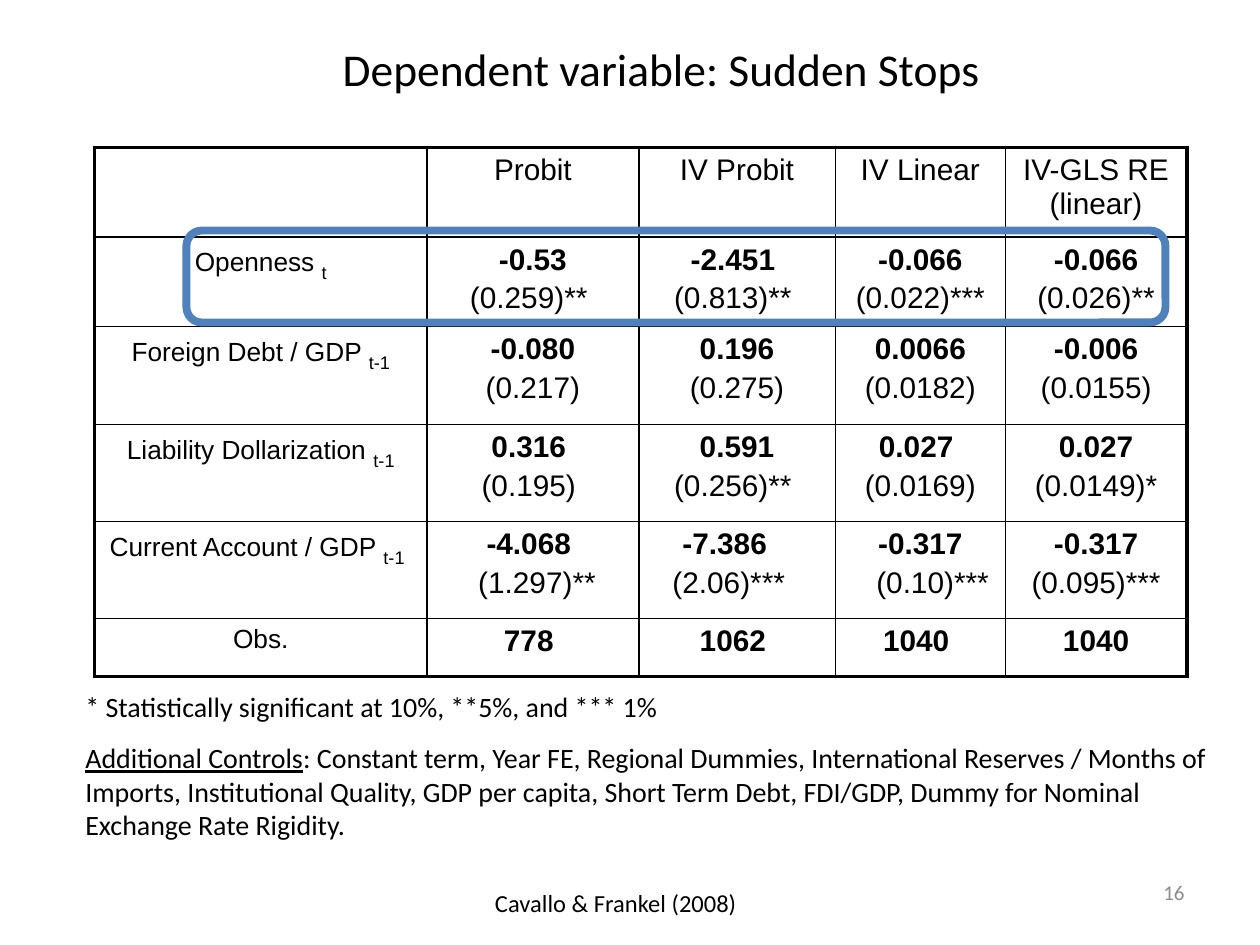
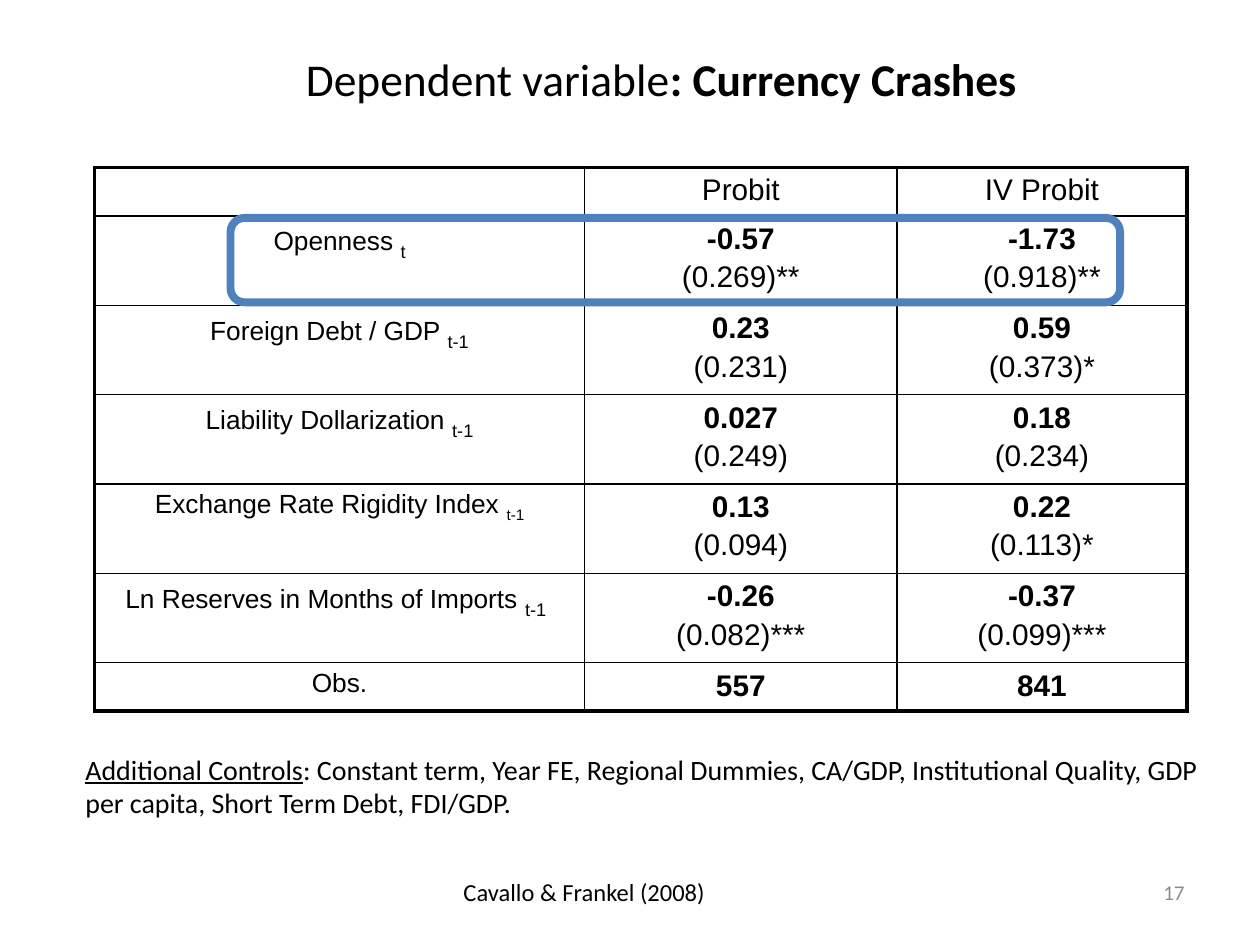
"""Build two slides of regression tables on sudden stops and currency crashes."""
from lxml.etree import SubElement
from pptx import Presentation
from pptx.dml.color import RGBColor
from pptx.enum.shapes import MSO_SHAPE
from pptx.enum.text import MSO_ANCHOR, PP_ALIGN
from pptx.oxml.ns import qn
from pptx.util import Inches, Pt

BLACK, GREY, BLUE = "000000", "8C8C8C", "4F81BD"
BODY_FONT, TABLE_FONT = "Calibri", "Arial"
VALUE_SIZE, LABEL_SIZE, SUBSCRIPT_SIZE = 17, 15, 18
OUTER_BORDER, INNER_BORDER = 2.25, 1
CITATION = "Cavallo & Frankel (2008)"
CONTROLS = "Additional Controls"
TABLE_LEFT = 0.75

INDENTS = {
    "(1.297)** ": ("marL", 9.4),
    "-7.386 ": ("marR", 9.4),
    "(0.10)*** ": ("marL", 14),
}

SLIDES = [
    {
        "title": [("Dependent variable: Sudden Stops", False)],
        "title_top": -0.08,
        "table_top": 1.17,
        "columns": [2.64, 1.68, 1.56, 1.35, 1.44],
        "heights": [0.71, 0.71, 0.78, 0.77, 0.77, 0.46],
        "header": ["Probit", "IV Probit", "IV Linear", "IV-GLS RE (linear)"],
        "rows": [
            (("Openness ", "t"),
             ["-0.53", "-2.451 ", "-0.066", "-0.066"],
             ["(0.259)** ", "(0.813)** ", "(0.022)***", "(0.026)**"]),
            (("Foreign Debt / GDP ", "t-1"),
             ["-0.080", "0.196", "0.0066", "-0.006"],
             [" (0.217) ", "(0.275)", "(0.0182)", "(0.0155)"]),
            (("Liability Dollarization ", "t-1"),
             ["0.316 ", "0.591", "0.027 ", "0.027"],
             ["(0.195) ", "(0.256)** ", " (0.0169) ", "(0.0149)*"]),
            (("Current Account / GDP ", "t-1", " "),
             ["-4.068 ", "-7.386 ", "-0.317", "-0.317"],
             ["(1.297)** ", "(2.06)***", "(0.10)*** ", "(0.095)***"]),
        ],
        "observations": ["778 ", "1062 ", "1040 ", "1040"],
        "significance": "* Statistically significant at 10%, **5%, and *** 1%",
        "controls": ": Constant term, Year FE, Regional Dummies, International "
                    "Reserves / Months of Imports, Institutional Quality, GDP per "
                    "capita, Short Term Debt, FDI/GDP, Dummy for Nominal Exchange "
                    "Rate Rigidity.",
        "controls_at": (0.58, 5.83, 9.33, 0.9),
        "citation_at": (3.83, 7, 2.58, 0.34),
        "number": "16",
        "highlight_at": (1.48, 1.83, 7.77, 0.73),
    },
    {
        "title": [("Dependent variable", False), (": Currency Crashes", True)],
        "title_top": 0,
        "table_top": 1.33,
        "columns": [3.89, 2.48, 2.3],
        "heights": [0.36] + [0.67] * 5 + [0.36],
        "header": ["Probit", "IV Probit"],
        "rows": [
            (("Openness ", "t"), ["-0.57", "-1.73"], ["(0.269)**", "(0.918)**"]),
            (("Foreign Debt / GDP ", "t-1"), ["0.23", "0.59"], ["(0.231)", "(0.373)*"]),
            (("Liability Dollarization ", "t-1"), ["0.027", "0.18"], ["(0.249)", "(0.234)"]),
            (("Exchange Rate Rigidity Index ", "t-1"),
             ["0.13", "0.22"], ["(0.094)", "(0.113)*"]),
            (("Ln Reserves in Months of Imports ", "t-1", " "),
             ["-0.26", "-0.37"], ["(0.082)***", "(0.099)***"]),
        ],
        "observations": ["557", "841"],
        "significance": None,
        "controls": ": Constant term, Year FE, Regional Dummies, CA/GDP, Institutional "
                    "Quality, GDP per capita, Short Term Debt, FDI/GDP.",
        "controls_at": (0.58, 5.92, 9.33, 0.64),
        "citation_at": (3.58, 6.91, 3.17, 0.34),
        "number": "17",
        "highlight_at": (1.83, 1.73, 7.06, 0.67),
    },
]
SMALL_SUBSCRIPTS = {"Exchange Rate Rigidity Index "}


def color(value):
    return RGBColor.from_string(value)


def write(para, text, size=16, font=BODY_FONT, fill=BLACK, bold=False,
          underline=False, baseline=0):
    span = para.add_run()
    span.text = text
    span.font.size = Pt(size)
    span.font.name = font
    span.font.color.rgb = color(fill)
    span.font.bold = bold
    span.font.underline = underline
    if baseline:
        span.font._element.set("baseline", str(baseline * 1000))


def add_box(page, at, align=PP_ALIGN.LEFT, anchor=MSO_ANCHOR.TOP):
    frame = page.shapes.add_textbox(*map(Inches, at)).text_frame
    frame.word_wrap = True
    frame.vertical_anchor = anchor
    para = frame.paragraphs[0]
    para.alignment = align
    return para


def set_borders(cell, row, column, last_row, last_column):
    properties = cell._tc.get_or_add_tcPr()
    edges = {"lnL": column == 0, "lnR": column == last_column,
             "lnT": row == 0, "lnB": row == last_row}
    for tag, outer in edges.items():
        width = OUTER_BORDER if outer else INNER_BORDER
        line = SubElement(properties, qn(f"a:{tag}"), w=str(Pt(width)))
        SubElement(SubElement(line, qn("a:solidFill")), qn("a:srgbClr"), val=BLACK)
    cell.fill.background()


def write_label(para, name, subscript="", ending=""):
    write(para, name, size=LABEL_SIZE, font=TABLE_FONT)
    if subscript:
        size = LABEL_SIZE if name in SMALL_SUBSCRIPTS else SUBSCRIPT_SIZE
        write(para, subscript, size=size, font=TABLE_FONT, baseline=-25)
    if ending:
        write(para, ending, size=LABEL_SIZE, font=TABLE_FONT)


def write_values(frame, values):
    for index, (text, bold) in enumerate(values):
        para = frame.add_paragraph() if index else frame.paragraphs[0]
        para.alignment = PP_ALIGN.CENTER
        para.space_before = Pt(3)
        if text in INDENTS:
            side, points = INDENTS[text]
            para._p.get_or_add_pPr().set(side, str(Pt(points)))
        write(para, text, size=VALUE_SIZE, font=TABLE_FONT, bold=bold)


def add_results(page, content):
    grid = [(None, [[(name, False)] for name in content["header"]])]
    for label, estimates, errors in content["rows"]:
        grid.append((label, [[(estimate, True), (error, False)]
                             for estimate, error in zip(estimates, errors)]))
    grid.append((("Obs.",), [[(count, True)] for count in content["observations"]]))

    columns, heights = content["columns"], content["heights"]
    at = (TABLE_LEFT, content["table_top"], sum(columns), sum(heights))
    table = page.shapes.add_table(len(grid), len(columns), *map(Inches, at)).table
    table.first_row = table.horz_banding = False
    for column, width in zip(table.columns, columns):
        column.width = Inches(width)
    for row, height in zip(table.rows, heights):
        row.height = Inches(height)

    for row, (label, values) in enumerate(grid):
        for column in range(len(columns)):
            cell = table.cell(row, column)
            set_borders(cell, row, column, len(grid) - 1, len(columns) - 1)
            para = cell.text_frame.paragraphs[0]
            if column:
                write_values(cell.text_frame, values[column - 1])
            elif label:
                para.alignment = PP_ALIGN.CENTER
                write_label(para, *label)
            else:
                SubElement(para._p, qn("a:endParaRPr"), sz=str(VALUE_SIZE * 100))


def add_highlight(page, at):
    frame = page.shapes.add_shape(MSO_SHAPE.ROUNDED_RECTANGLE, *map(Inches, at))
    frame.shadow.inherit = False
    frame.fill.background()
    frame.line.color.rgb = color(BLUE)
    frame.line.width = Pt(4.5)


def add_page(deck, content):
    page = deck.slides.add_slide(deck.slide_layouts[6])
    title = add_box(page, (1, content["title_top"], 8.5, 1.25),
                    PP_ALIGN.CENTER, MSO_ANCHOR.MIDDLE)
    for text, bold in content["title"]:
        write(title, text, size=26, bold=bold)
    add_results(page, content)
    if content["significance"]:
        write(add_box(page, (0.58, 5.42, 5.92, 0.37)), content["significance"])
    controls = add_box(page, content["controls_at"])
    write(controls, CONTROLS, underline=True)
    write(controls, content["controls"])
    write(add_box(page, content["citation_at"]), CITATION, size=14)
    number = add_box(page, (7.42, 6.83, 2.08, 0.5), PP_ALIGN.RIGHT, MSO_ANCHOR.MIDDLE)
    write(number, content["number"], size=12, fill=GREY)
    add_highlight(page, content["highlight_at"])


def main():
    deck = Presentation()
    deck.slide_width, deck.slide_height = Inches(10), Inches(7.5)
    for content in SLIDES:
        add_page(deck, content)
    deck.save("out.pptx")


if __name__ == "__main__":
    main()
